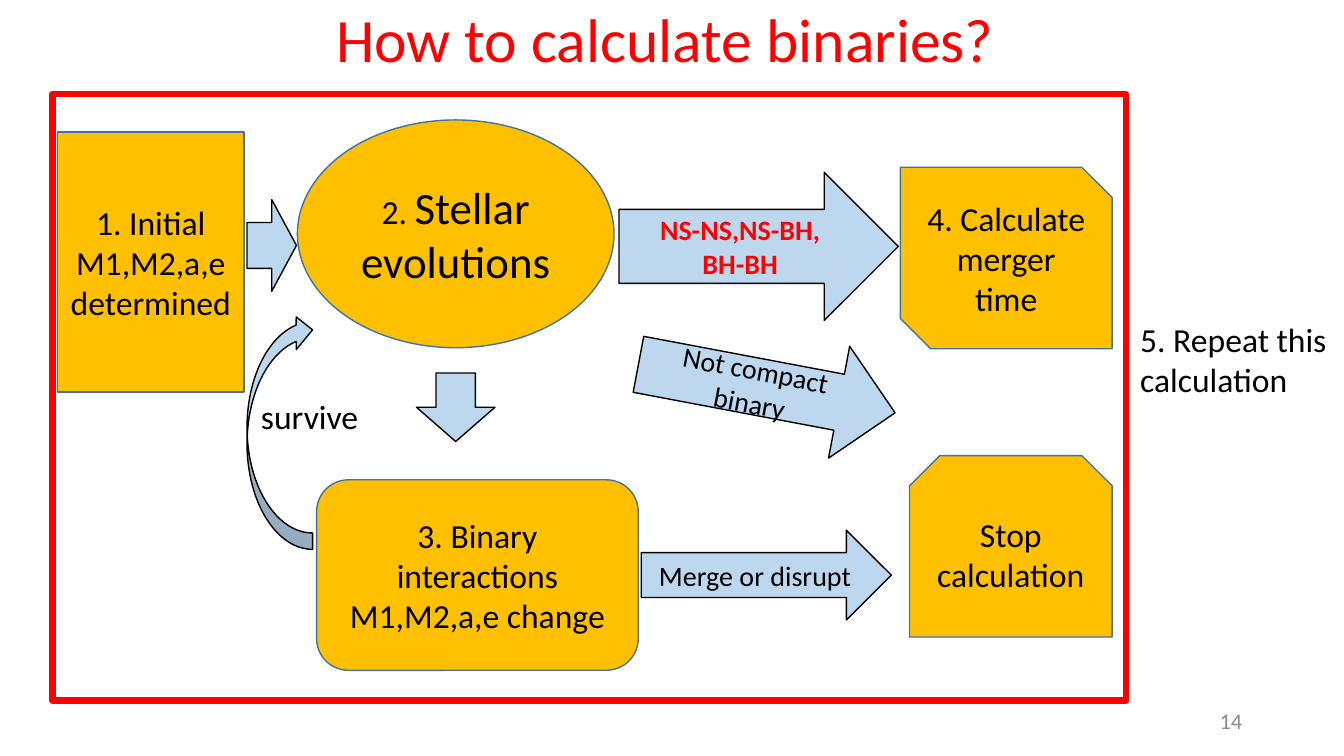
from dataclasses import dataclass

from pptx import Presentation
from pptx.dml.color import RGBColor
from pptx.enum.shapes import MSO_SHAPE as SHAPE
from pptx.enum.text import MSO_ANCHOR, PP_ALIGN
from pptx.util import Pt

# Content: boxes are left, top, width, height in px
TITLE = ("How to calculate binaries?", (85, 0, 1150, 85))
PAGE_NUMBER = ("14", (942, 695, 300, 40))
FRAME = (52, 93, 1065, 602)

# Each step: shape, box, paragraphs; a paragraph is a list of (text, size name)
STEPS = [
    (SHAPE.RECTANGLE, (57, 131, 185, 258),
     [[("1. Initial M1,M2,a,e determined", "body")]]),
    (SHAPE.OVAL, (295, 119, 314, 226),
     [[("2. ", "body"), ("Stellar evolutions", "large")]]),
    (SHAPE.ROUNDED_RECTANGLE, (314, 476, 319, 189),
     [[("3. Binary interactions", "body")], [("M1,M2,a,e change", "body")]]),
    (SHAPE.SNIP_2_DIAG_RECTANGLE, (893, 166, 210, 180),
     [[("4. Calculate merger time", "body")]]),
    (SHAPE.SNIP_2_SAME_RECTANGLE, (902, 452, 201, 180),
     [[("Stop calculation", "body")]]),
]

# Each arrow: shape, box, rotation, lines of text, emphasised
ARROWS = [
    (SHAPE.DOWN_ARROW, (413, 370, 78, 68), 0, [], False),
    (SHAPE.RIGHT_ARROW, (245, 198, 49, 91), 0, [], False),
    (SHAPE.RIGHT_ARROW, (636, 526, 248, 89), 0, ["Merge or disrupt"], False),
    (SHAPE.RIGHT_ARROW, (614, 171, 277, 147), 0, ["NS-NS,NS-BH,", "BH-BH"], True),
    (SHAPE.RIGHT_ARROW, (631, 329, 259, 113), 10.7, ["Not compact binary"], False),
    (SHAPE.CURVED_LEFT_ARROW, (245, 311, 65, 234), 180, [], False),
]

NOTES = [
    ("survive", (249, 388, 140, 50)),
    ("5. Repeat this calculation", (1121, 311, 212, 193)),
]


@dataclass(frozen=True)
class Theme:
    font: str = "Calibri"
    red: str = "FF0000"
    black: str = "000000"
    grey: str = "8C8C8C"
    step_fill: str = "FFC000"
    step_line: str = "43739E"
    arrow_fill: str = "BDD7EE"
    title: int = 44
    large: int = 32
    body: int = 24
    label: int = 20
    page: int = 16


THEME = Theme()
PX = 9144  # EMU per px, 100 px to the inch


def emu(box):
    return [v * PX for v in box]


def write(tf, paragraphs, color, align, bold=False):
    """Fill a text frame with paragraphs of (text, size name) runs."""
    tf.word_wrap = True
    for i, runs in enumerate(paragraphs):
        p = tf.paragraphs[0] if i == 0 else tf.add_paragraph()
        p.alignment = align
        p.font.name = THEME.font
        p.font.bold = bold
        p.font.color.rgb = RGBColor.from_string(color)
        p.font.size = Pt(getattr(THEME, runs[0][1]))
        for text, size in runs:
            r = p.add_run()
            r.text = text
            if size != runs[0][1]:
                r.font.size = Pt(getattr(THEME, size))


def add_shape(s, kind, box, fill, line, width=1):
    sp = s.shapes.add_shape(kind, *emu(box))
    sp.shadow.inherit = False
    if fill:
        sp.fill.solid()
        sp.fill.fore_color.rgb = RGBColor.from_string(fill)
    else:
        sp.fill.background()
    sp.line.color.rgb = RGBColor.from_string(line)
    sp.line.width = Pt(width)
    return sp


def add_text(s, text, box, size, color, align=PP_ALIGN.LEFT, anchor=MSO_ANCHOR.TOP):
    tf = s.shapes.add_textbox(*emu(box)).text_frame
    tf.vertical_anchor = anchor
    write(tf, [[(text, size)]], color, align)
    return tf


def main():
    prs = Presentation()
    prs.slide_width, prs.slide_height = emu((1333, 750))
    s = prs.slides.add_slide(prs.slide_layouts[6])

    # Title
    tf = add_text(s, *TITLE, "title", THEME.red, PP_ALIGN.CENTER, MSO_ANCHOR.MIDDLE)
    tf.paragraphs[0].line_spacing = 0.9

    # Steps of the calculation
    for kind, box, paragraphs in STEPS:
        sp = add_shape(s, kind, box, THEME.step_fill, THEME.step_line)
        write(sp.text_frame, paragraphs, THEME.black, PP_ALIGN.CENTER)

    # Arrows between the steps
    for kind, box, rotation, lines, strong in ARROWS:
        sp = add_shape(s, kind, box, THEME.arrow_fill, THEME.black)
        sp.rotation = rotation
        write(sp.text_frame, [[(line, "label")] for line in lines],
              THEME.red if strong else THEME.black, PP_ALIGN.CENTER, strong)

    # Frame around the repeated part, and notes
    add_shape(s, SHAPE.RECTANGLE, FRAME, None, THEME.red, 4.5)
    for text, box in NOTES:
        add_text(s, text, box, "body", THEME.black)

    # Page number
    add_text(s, *PAGE_NUMBER, "page", THEME.grey, PP_ALIGN.RIGHT, MSO_ANCHOR.MIDDLE)

    prs.save("out.pptx")


if __name__ == "__main__":
    main()
